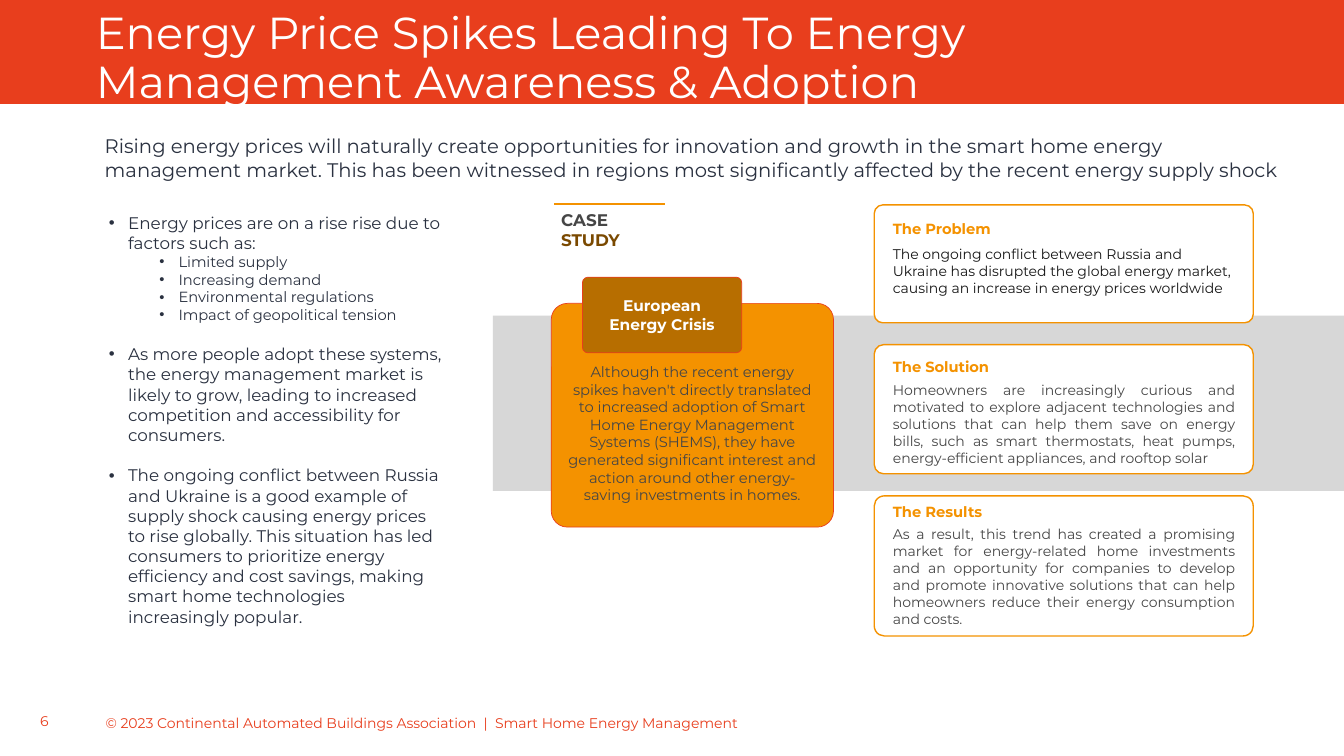
from lxml import etree
from pptx import Presentation
from pptx.dml.color import RGBColor
from pptx.enum import shapes, text
from pptx.oxml import ns
from pptx.util import Pt

FONT = "Montserrat"
RED, ORANGE, BROWN, DARK_BROWN = "E83E1D", "F49200", "B76E00", "7A4900"
NAVY, GREY, BLACK, WHITE, BAND = "2A3140", "464646", "161616", "FFFFFF", "D7D7D7"
LEFT, CENTER, JUSTIFY = (text.PP_ALIGN.LEFT, text.PP_ALIGN.CENTER,
                         text.PP_ALIGN.JUSTIFY)
TOP, MIDDLE = text.MSO_ANCHOR.TOP, text.MSO_ANCHOR.MIDDLE

TITLE = "Energy Price Spikes Leading To Energy Management Awareness & Adoption"
INTRO = ("Rising energy prices will naturally create opportunities for innovation and "
         "growth in the smart home energy management market. This has been witnessed in "
         "regions most significantly affected by the recent energy supply shock")
FOOTER = ("© 2023 Continental Automated Buildings Association  |  "
          "Smart Home Energy Management")
PAGE = "6"

# level, space before, text
BULLETS = [
    (0, 0, "Energy prices are on a rise rise due to factors such as:"),
    (1, 0, "Limited supply"),
    (1, 0, "Increasing demand"),
    (1, 0, "Environmental regulations"),
    (1, 0, "Impact of geopolitical tension"),
    (0, 14.6, "As more people adopt these systems, the energy management market is likely "
              "to grow, leading to increased competition and accessibility for consumers."),
    (0, 14.6, "The ongoing conflict between Russia and Ukraine is a good example of supply "
              "shock causing energy prices to rise globally. This situation has led "
              "consumers to prioritize energy efficiency and cost savings, making smart "
              "home technologies increasingly popular."),
]
# level: (left margin, text size)
LEVELS = {0: (13.7, 12), 1: (49.7, 10.5)}

CRISIS = "European Energy Crisis"
CRISIS_TEXT = ("Although the recent energy spikes haven't directly translated to increased "
               "adoption of Smart Home Energy Management Systems (SHEMS), they have "
               "generated significant interest and action around other energy-saving "
               "investments in homes.")

# heading, text, colour, alignment, card top, card height, heading top, text top
CARDS = [
    ("The Problem",
     "The ongoing conflict between Russia and Ukraine has disrupted the global energy "
     "market, causing an increase in energy prices worldwide",
     BLACK, LEFT, 146.4, 84.2, 153.4, 172.1),
    ("The Solution",
     "Homeowners are increasingly curious and motivated to explore adjacent technologies "
     "and solutions that can help them save on energy bills, such as smart thermostats, "
     "heat pumps, energy-efficient appliances, and rooftop solar",
     GREY, JUSTIFY, 246.2, 92.2, 252, 269.3),
    ("The Results",
     "As a result, this trend has created a promising market for energy-related home "
     "investments and an opportunity for companies to develop and promote innovative "
     "solutions that can help homeowners reduce their energy consumption and costs.",
     GREY, JUSTIFY, 354.2, 100.1, 355.7, 372.2),
]
CARD_LEFT, CARD_WIDTH = 624.5, 270.7
CARD_TEXT_LEFT, CARD_TEXT_WIDTH = 630.7, 258.5


def rgb(color):
    return RGBColor.from_string(color)


def place(sp, box):
    for name, value in zip(("left", "top", "width", "height"), box):
        setattr(sp, name, Pt(value))


def add_run(p, content, size, color, bold=False):
    r = p.add_run()
    r.text = content
    for name, value in {"name": FONT, "size": Pt(size), "bold": bold}.items():
        setattr(r.font, name, value)
    r.font.color.rgb = rgb(color)


def write(sp, runs, size, align=LEFT, anchor=TOP, bold=False, spacing=1.0):
    """Fill a shape with one paragraph of (text, colour) runs."""
    tf = sp.text_frame
    for name, value in {"word_wrap": True, "vertical_anchor": anchor,
                        "auto_size": text.MSO_AUTO_SIZE.NONE}.items():
        setattr(tf, name, value)
    p = tf.paragraphs[0]
    p.alignment, p.line_spacing = align, spacing
    for content, color in runs:
        add_run(p, content, size, color, bold)


def add_text(box, runs, size, **style):
    sp = slide.shapes.add_textbox(*map(Pt, box))
    write(sp, runs, size, **style)


def add_box(kind, box, fill, line=None, line_width=1):
    sp = slide.shapes.add_shape(kind, *map(Pt, box))
    sp.shadow.inherit = False
    sp.fill.solid()
    sp.fill.fore_color.rgb = rgb(fill)
    if line:
        sp.line.color.rgb, sp.line.width = rgb(line), Pt(line_width)
    else:
        sp.line.fill.background()
    if kind == ROUND:
        sp.adjustments[0] = 0.072
    return sp


def add_bullets(sp):
    tf = sp.text_frame
    tf.auto_size, tf.vertical_anchor = text.MSO_AUTO_SIZE.NONE, TOP
    for i, (level, before, content) in enumerate(BULLETS):
        p = tf.add_paragraph() if i else tf.paragraphs[0]
        margin, size = LEVELS[level]
        for name, value in {"level": level, "line_spacing": 1.0, "space_after": Pt(0),
                            "space_before": Pt(before)}.items():
            setattr(p, name, value)
        pPr = p._p.get_or_add_pPr()
        pPr.set("marL", str(Pt(margin)))
        pPr.set("indent", str(-Pt(13.7)))
        etree.SubElement(pPr, ns.qn("a:buFont")).set("typeface", "Arial")
        etree.SubElement(pPr, ns.qn("a:buChar")).set("char", "•")
        add_run(p, content, size, NAVY)


RECT, ROUND = shapes.MSO_SHAPE.RECTANGLE, shapes.MSO_SHAPE.ROUNDED_RECTANGLE
prs = Presentation()
prs.slide_width, prs.slide_height = Pt(960), Pt(540)
slide = prs.slides.add_slide(prs.slide_layouts[1])
title, body = slide.placeholders

header = add_box(RECT, (0, 0, 960, 74.2), RED)
slide.shapes._spTree.insert(2, header._element)  # behind the title
place(title, (61.2, 4.3, 771.8, 35.3))
write(title, [(TITLE, WHITE)], 32, spacing=0.9)
place(body, (70.6, 148.3, 254.9, 305.3))
add_bullets(body)

add_text((68.4, 501.8, 594.7, 28.8), [(FOOTER, RED)], 10, anchor=MIDDLE)
add_text((21.6, 501.1, 49, 28.1), [(PAGE, RED)], 10, anchor=MIDDLE)
add_text((67.7, 92.2, 859, 41), [(INTRO, NAVY)], 14)

add_box(RECT, (352.1, 225.4, 607.9, 125.3), BAND)
crisis = add_box(ROUND, (393.8, 216.7, 201.6, 159.8), ORANGE, RED, 0.5)
crisis.text_frame.margin_top = Pt(29.2)  # keeps the text below the label
write(crisis, [(CRISIS_TEXT, GREY)], 10.5, align=CENTER, anchor=MIDDLE)
label = add_box(ROUND, (416, 198, 113.8, 54), BROWN, RED, 0.5)
write(label, [(CRISIS, WHITE)], 11, align=CENTER, anchor=MIDDLE, bold=True)

rule = slide.shapes.add_connector(shapes.MSO_CONNECTOR.STRAIGHT,
                                  *map(Pt, (396, 145.6, 475.2, 145.6)))
rule.line.color.rgb, rule.line.width = rgb(ORANGE), Pt(1)
etree.SubElement(rule._element.spPr, ns.qn("a:effectLst"))
add_text((393.8, 146.2, 89.3, 36), [("CASE ", GREY), ("STUDY", DARK_BROWN)], 12, bold=True)

for heading, content, color, align, top, height, heading_top, text_top in CARDS:
    add_box(ROUND, (CARD_LEFT, top, CARD_WIDTH, height), WHITE, ORANGE)
    add_text((CARD_TEXT_LEFT, heading_top, 139, 20.5), [(heading, ORANGE)], 10.5, bold=True)
    add_text((CARD_TEXT_LEFT, text_top, CARD_TEXT_WIDTH, top + height - text_top),
             [(content, color)], 10, align=align)

prs.save("out.pptx")
